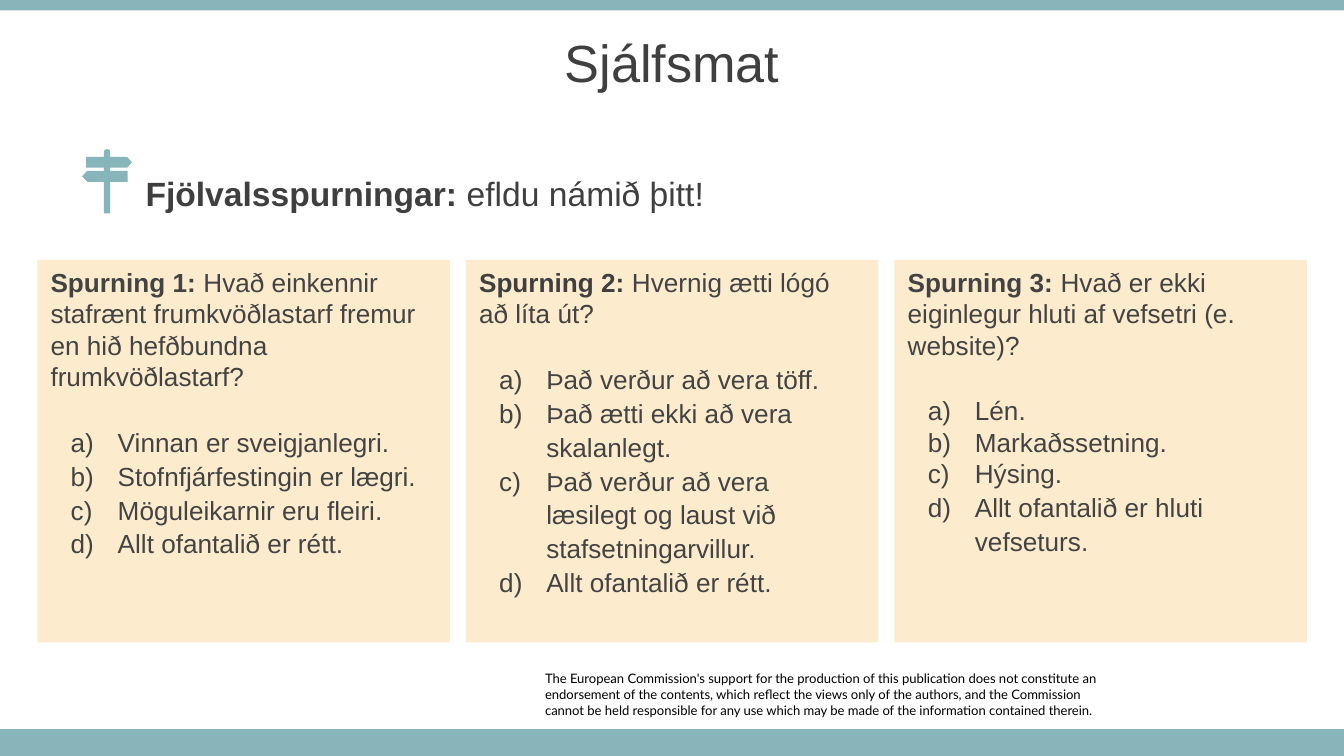
"""Build the self-assessment slide with three multiple-choice questions."""
import dataclasses

import lxml.etree
import pptx
import pptx.dml.color
import pptx.enum.shapes
import pptx.enum.text
import pptx.oxml.ns
import pptx.slide
import pptx.util

Pt = pptx.util.Pt
ALIGN = pptx.enum.text.PP_ALIGN
ANCHOR = pptx.enum.text.MSO_ANCHOR


@dataclasses.dataclass(frozen=True)
class Theme:
    teal: str = "87B5BA"
    cream: str = "FCECCD"
    heading: str = "3F3F3F"
    text: str = "434343"
    black: str = "000000"
    font: str = "Arial"
    notice_font: str = "Lato"
    title_size: float = 28
    subtitle_size: float = 18
    text_size: float = 14
    notice_size: float = 7


@dataclasses.dataclass
class Composer:
    theme: Theme
    page: pptx.slide.Slide

    def place(self, box, left, top, width, height):
        box.left, box.top, box.width, box.height = map(Pt, (left, top, width, height))

    def paint(self, shape, color):
        shape.shadow.inherit = False
        shape.fill.solid()
        shape.fill.fore_color.rgb = pptx.dml.color.RGBColor.from_string(color)
        shape.line.fill.background()

    def span(self, para, text, size, color, bold=False, font=None):
        span = para.add_run()
        span.text = text
        span.font.name = font or self.theme.font
        span.font.size = Pt(size)
        span.font.bold = bold
        span.font.color.rgb = pptx.dml.color.RGBColor.from_string(color)

    def bullet(self, para, margin, indent, kind, color=None, **options):
        props = para._p.get_or_add_pPr()
        props.set("marL", str(Pt(margin)))
        props.set("indent", str(Pt(indent)))
        qn = pptx.oxml.ns.qn
        if color:
            tint = lxml.etree.SubElement(props, qn("a:buClr"))
            lxml.etree.SubElement(tint, qn("a:srgbClr"), val=color)
        lxml.etree.SubElement(props, qn(kind), **options)

    def heading(self, box, bounds, spans, size, align):
        self.place(box, *bounds)
        frame = box.text_frame
        frame.word_wrap = True
        frame.auto_size = pptx.enum.text.MSO_AUTO_SIZE.NONE
        frame.vertical_anchor = ANCHOR.MIDDLE
        para = frame.paragraphs[0]
        para.alignment = align
        para.space_before = Pt(0)
        self.bullet(para, 0, 0, "a:buNone")
        for text, bold in spans:
            self.span(para, text, size, self.theme.heading, bold)

    def block(self, left, top, width, height, color):
        kind = pptx.enum.shapes.MSO_SHAPE.RECTANGLE
        box = self.page.shapes.add_shape(kind, *map(Pt, (left, top, width, height)))
        self.paint(box, color)
        return box

    def outline(self, points, color):
        corners = [(Pt(x), Pt(y)) for x, y in points]
        builder = self.page.shapes.build_freeform(*corners[0])
        builder.add_line_segments(corners[1:], close=True)
        self.paint(builder.convert_to_shape(), color)

    def notice(self, bounds, lines):
        box = self.page.shapes.add_textbox(*map(Pt, bounds))
        frame = box.text_frame
        frame.word_wrap = True
        frame.margin_left = frame.margin_right = Pt(0)
        frame.margin_top = frame.margin_bottom = Pt(0)
        for index, line in enumerate(lines):
            para = frame.add_paragraph() if index else frame.paragraphs[0]
            self.span(para, line, self.theme.notice_size, self.theme.black,
                      font=self.theme.notice_font)

    def question(self, bounds, label, label_color, prompt, answers):
        theme = self.theme
        frame = self.block(*bounds, theme.cream).text_frame
        frame.word_wrap = True
        frame.vertical_anchor = ANCHOR.TOP
        para = frame.paragraphs[0]
        para.alignment = ALIGN.LEFT
        self.span(para, label, theme.text_size, label_color, True)
        self.span(para, prompt, theme.text_size, theme.text)
        for index, (answer, spacing) in enumerate(answers):
            para = frame.add_paragraph()
            para.alignment = ALIGN.LEFT
            para.line_spacing = spacing
            para.space_before = Pt(0 if index else 17)
            self.bullet(para, 36, -25.2, "a:buAutoNum", theme.text, type="alphaLcParenR")
            self.span(para, answer, theme.text_size, theme.text)


SIGNPOST = [
    (56.1, 80.3), (57.4, 79.9), (58.7, 80.3), (59.1, 81.6), (59.1, 84.1),
    (68.2, 84.1), (70.7, 87), (68.2, 89.9), (59.1, 89.9), (59.1, 91.6),
    (68.4, 91.6), (68.4, 97.4), (59.1, 97.4), (59.1, 114.3), (55.7, 114.3),
    (55.7, 97.4), (46.8, 97.4), (44, 94.5), (46.8, 91.6), (55.7, 91.6),
    (55.7, 89.9), (46.2, 89.9), (46.2, 84.1), (55.7, 84.1), (55.7, 81.6),
]
LOOSE, SINGLE = 1.08, 1.0
NOTICE = [
    "The European Commission's support for the production of this publication does not "
    "constitute an endorsement of the contents, which reflect the views only of the "
    "authors, and the Commission",
    "cannot be held responsible for any use which may be made of the information "
    "contained therein.",
]


def main():
    theme = Theme()
    questions = [
        ("Spurning 1: ", theme.text,
         "Hvað einkennir stafrænt frumkvöðlastarf fremur en hið hefðbundna frumkvöðlastarf?",
         [("Vinnan er sveigjanlegri.", LOOSE), ("Stofnfjárfestingin er lægri.", LOOSE),
          ("Möguleikarnir eru fleiri.", LOOSE), ("Allt ofantalið er rétt.", LOOSE)]),
        ("Spurning 2: ", theme.heading, "Hvernig ætti lógó að líta út?",
         [("Það verður að vera töff.", LOOSE), ("Það ætti ekki að vera skalanlegt.", LOOSE),
          ("Það verður að vera læsilegt og laust við stafsetningarvillur.", LOOSE),
          ("Allt ofantalið er rétt.", LOOSE)]),
        ("Spurning 3: ", theme.text,
         "Hvað er ekki eiginlegur hluti af vefsetri (e. website)?",
         [("Lén.", LOOSE), ("Markaðssetning.", SINGLE), ("Hýsing.", SINGLE),
          ("Allt ofantalið er hluti vefseturs.", LOOSE)]),
    ]
    deck = pptx.Presentation()
    deck.slide_width, deck.slide_height = Pt(720), Pt(405)
    page = deck.slides.add_slide(deck.slide_layouts[1])
    composer = Composer(theme, page)
    composer.notice((292, 359.3, 300, 25.2), NOTICE)
    composer.block(0, 390.7, 720, 14.3, theme.teal)
    composer.block(0, 0, 720, 5.6, theme.teal)
    composer.heading(page.shapes.title, (0, 10.3, 720, 45.4),
                     [("Sjálfsmat", False)], theme.title_size, ALIGN.CENTER)
    composer.heading(page.placeholders[1], (70.8, 92.5, 482, 22.3),
                     [("Fjölvalsspurningar: ", True), ("efldu námið þitt!", False)],
                     theme.subtitle_size, ALIGN.LEFT)
    composer.outline(SIGNPOST, theme.teal)
    for column, content in enumerate(questions):
        composer.question((20 + 229.6 * column, 139.2, 221, 205), *content)
    deck.save("out.pptx")


if __name__ == "__main__":
    main()
